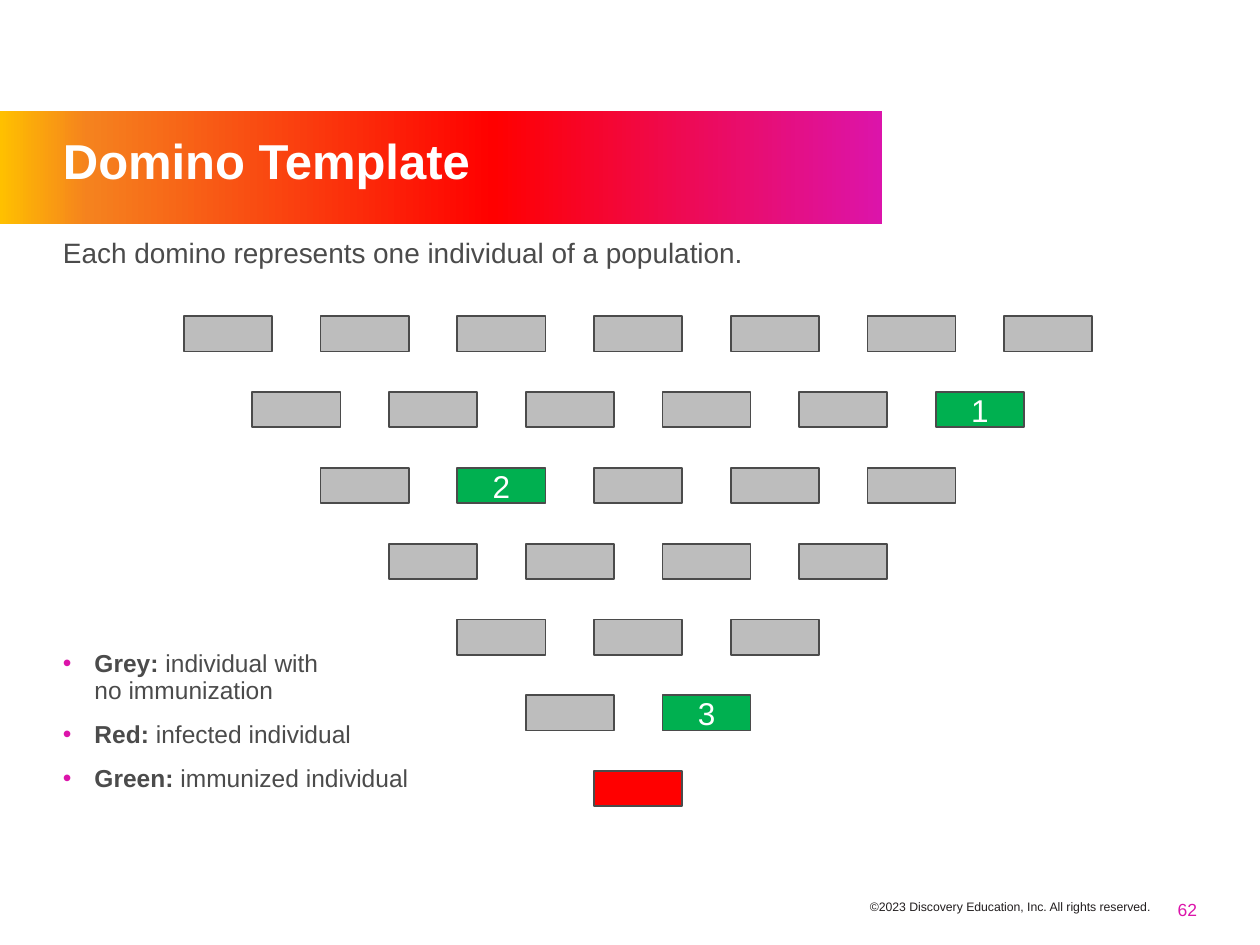
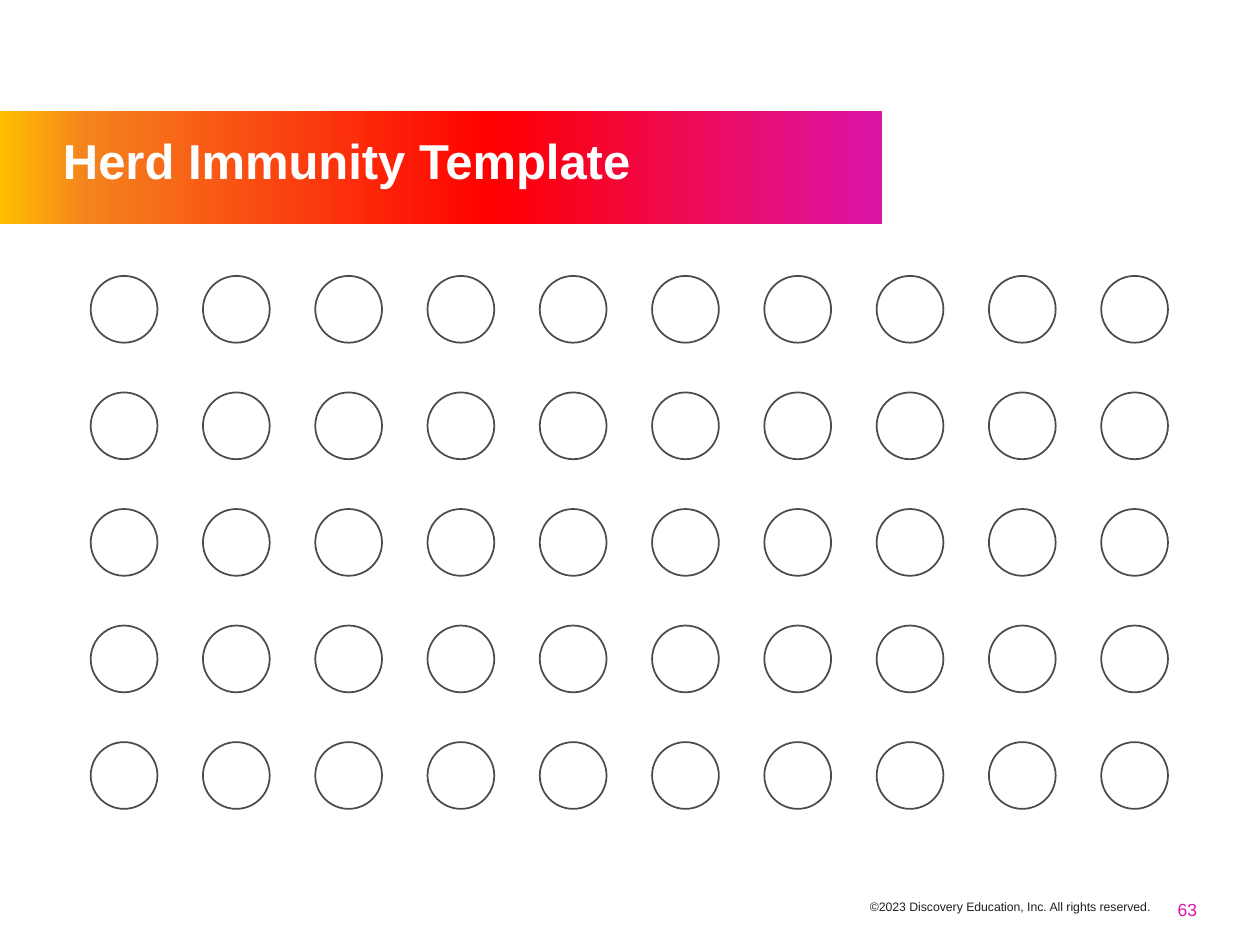
from dataclasses import dataclass, field

from lxml.etree import SubElement
from pptx import Presentation
from pptx.dml.color import RGBColor
from pptx.enum.shapes import MSO_SHAPE as Kind
from pptx.enum.text import MSO_ANCHOR as Anchor, PP_ALIGN as Align
from pptx.oxml.ns import qn
from pptx.util import Inches, Pt

WHITE, DARK, GREY, GREEN, RED, PINK, BLACK = (
    "FFFFFF", "4B4B4B", "BDBDBD", "00B050", "FF0000", "DC14AA", "221E1F")
STOPS = ((0, "FFC000"), (10, "F5821E"), (56, RED), (100, PINK))
RIGHTS = "©2023 Discovery Education, Inc. All rights reserved."
MARKS = {(1, 5): "1", (2, 1): "2", (5, 1): "3"}
KEYS = (
    ("Grey:", " individual with\nno immunization"),
    ("Red:", " infected individual"),
    ("Green:", " immunized individual"),
)


@dataclass
class Box:
    left: float
    top: float
    width: float
    height: float

    def emu(self) -> list:
        return [Inches(v) for v in (self.left, self.top, self.width, self.height)]


@dataclass
class Label:
    box: Box
    size: float
    color: str
    frame: dict = field(default_factory=dict)
    para: dict = field(default_factory=dict)
    bold: bool = False


@dataclass
class Grid:
    left: float
    top: float
    right: float
    bottom: float
    cols: int
    rows: int
    width: float
    height: float

    def cell(self, row: int, col: float) -> Box:
        across = (self.right - self.left) / (self.cols - 1)
        down = (self.bottom - self.top) / (self.rows - 1)
        return Box(self.left + col * across, self.top + row * down,
                   self.width, self.height)


BAND = Box(0, 0.88, 7, 0.9)
TITLE = Label(Box(0.5, 0.9, 6.3, 0.8), 28, WHITE,
              {"vertical_anchor": Anchor.MIDDLE}, {"line_spacing": 0.9}, True)
NUMBER = Label(Box(9.09, 7.1, 0.41, 0.2), 10, PINK,
               {"vertical_anchor": Anchor.BOTTOM}, {"alignment": Align.RIGHT})
FOOTER = Label(Box(4.49, 7.14, 4.64, 0.12), 7, BLACK,
               para={"alignment": Align.RIGHT})
INTRO = Label(Box(0.5, 1.9, 9, 0.3), 16, DARK, para={"line_spacing": 0.9})
LEGEND = Label(Box(0.5, 5.17, 3.1, 1.2), 14, DARK, para={"line_spacing": 0.9})
DIGIT = Label(Box(0, 0, 0, 0), 18, WHITE, {"vertical_anchor": Anchor.MIDDLE},
              {"alignment": Align.CENTER})
TILES = Grid(1.46, 2.51, 7.97, 6.12, 7, 7, 0.7, 0.28)
RINGS = Grid(0.72, 2.19, 8.74, 5.89, 10, 5, 0.53, 0.53)


def rgb(code: str) -> RGBColor:
    return RGBColor.from_string(code)


def apply(item, values: dict) -> None:
    for key, value in values.items():
        setattr(item, key, value)


def style(font, label: Label, bold: bool) -> None:
    apply(font, {"name": "Arial", "size": Pt(label.size), "bold": bold})
    font.color.rgb = rgb(label.color)


def write(frame, label: Label, text: str) -> None:
    apply(frame, label.frame)
    para = frame.paragraphs[0]
    apply(para, label.para)
    run = para.add_run()
    run.text = text
    style(run.font, label, label.bold)


def open_box(slide, label: Label):
    frame = slide.shapes.add_textbox(*label.box.emu()).text_frame
    sides = ("left", "top", "right", "bottom")
    apply(frame, {f"margin_{side}": 0 for side in sides} | {"word_wrap": True})
    return frame


def draw(slide, kind, box: Box, fill: str = "", line: str = ""):
    shape = slide.shapes.add_shape(kind, *box.emu())
    shape.shadow.inherit = False
    if fill:
        shape.fill.solid()
        shape.fill.fore_color.rgb = rgb(fill)
    else:
        shape.fill.background()
    if line:
        shape.line.color.rgb = rgb(line)
        shape.line.width = Pt(1)
    else:
        shape.line.fill.background()
    return shape


def add_band(slide) -> None:
    fill = draw(slide, Kind.RECTANGLE, BAND).fill
    fill.gradient()
    fill.gradient_angle = 0
    stops = fill.gradient_stops
    group = stops[0]._gs.getparent()
    for old in list(group):
        group.remove(old)
    for place, code in STOPS:
        stop = SubElement(group, qn("a:gs"), pos=str(place * 1000))
        SubElement(stop, qn("a:srgbClr"), val=code)


def add_page(deck, title: str, number: int):
    slide = deck.slides.add_slide(deck.slide_layouts[6])
    add_band(slide)
    for label, text in ((NUMBER, str(number)), (FOOTER, RIGHTS), (TITLE, title)):
        write(open_box(slide, label), label, text)
    return slide


def add_dot(para) -> None:
    props = para._p.get_or_add_pPr()
    props.set("marL", str(Inches(0.25)))
    props.set("indent", str(-Inches(0.25)))
    SubElement(SubElement(props, qn("a:buClr")), qn("a:srgbClr"), val=PINK)
    SubElement(props, qn("a:buFont"), typeface="Arial")
    SubElement(props, qn("a:buChar"), char="•")


def add_legend(slide) -> None:
    frame = open_box(slide, LEGEND)
    for index, (name, note) in enumerate(KEYS):
        para = frame.add_paragraph() if index else frame.paragraphs[0]
        add_dot(para)
        apply(para, LEGEND.para)
        if index:
            para.space_before = Pt(10)
        for part, bold in ((name, True), (note, False)):
            for turn, piece in enumerate(part.split("\n")):
                if turn:
                    para.add_line_break()
                run = para.add_run()
                run.text = piece
                style(run.font, LEGEND, bold)


def add_tiles(slide) -> None:
    for row in range(TILES.rows):
        for col in range(TILES.cols - row):
            mark = MARKS.get((row, col))
            last = row == TILES.rows - 1
            fill = GREEN if mark else RED if last else GREY
            box = TILES.cell(row, col + row / 2)
            tile = draw(slide, Kind.RECTANGLE, box, fill, DARK)
            if mark:
                write(tile.text_frame, DIGIT, mark)


def add_rings(slide) -> None:
    for row in range(RINGS.rows):
        for col in range(RINGS.cols):
            draw(slide, Kind.OVAL, RINGS.cell(row, col), line=DARK)


def main() -> None:
    deck = Presentation()
    apply(deck, {"slide_width": Inches(10), "slide_height": Inches(7.5)})
    slide = add_page(deck, "Domino Template", 62)
    write(open_box(slide, INTRO), INTRO,
          "Each domino represents one individual of a population.")
    add_legend(slide)
    add_tiles(slide)
    add_rings(add_page(deck, "Herd Immunity Template", 63))
    deck.save("out.pptx")


if __name__ == "__main__":
    main()
